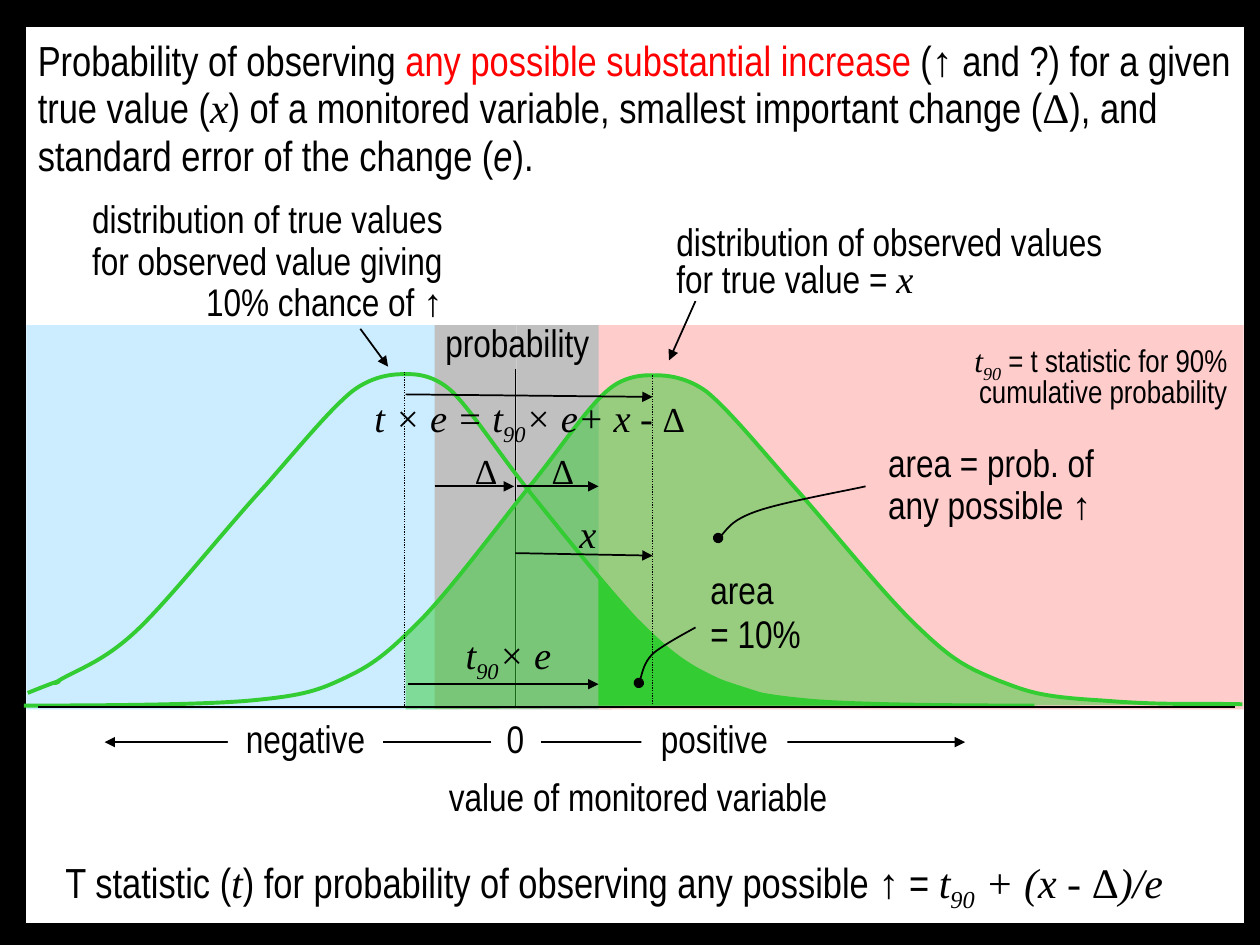
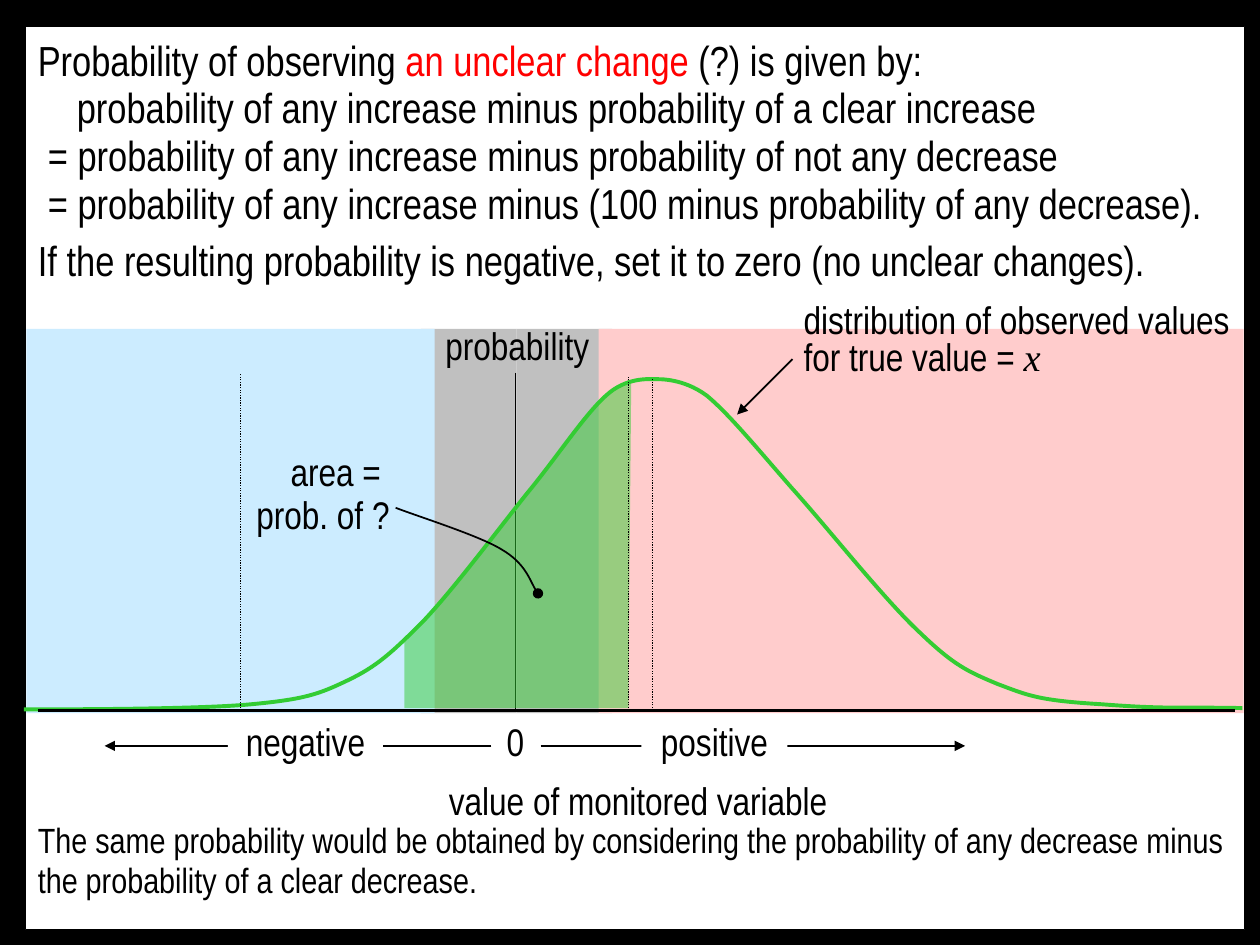
import pptx
import pptx.util
import pptx.dml.color
import pptx.enum.dml
import pptx.enum.shapes
import pptx.enum.text
import pptx.oxml.ns
import lxml.etree

PX = 9144  # one hundred px to the inch
RGB = pptx.dml.color.RGBColor
BLACK, WHITE, RED = RGB(0, 0, 0), RGB(255, 255, 255), RGB(255, 0, 0)
GREY, BLUE, PINK = RGB(0xC0, 0xC0, 0xC0), RGB(0xCC, 0xEC, 0xFF), RGB(0xFF, 0xCC, 0xCC)
GREEN = RGB(0x33, 0xCC, 0x33)
NARROW, TIMES = "Arial Narrow", "Times New Roman"
ALIGN = pptx.enum.text.PP_ALIGN
LEFT, MID, RIGHT = ALIGN.LEFT, ALIGN.CENTER, ALIGN.RIGHT
RECT = pptx.enum.shapes.MSO_SHAPE.RECTANGLE
Pt = pptx.util.Pt
qn = pptx.oxml.ns.qn


def write(para, runs, size, align=LEFT, gap=0.8):
    """Fill a paragraph. Marks: n narrow, r red, e narrow italic,
    t Times, d small Times, i Times italic, s Times italic subscript."""
    para.alignment, para.line_spacing = align, gap
    para.font.size, para.font.name, para.font.color.rgb = Pt(size), NARROW, BLACK
    for words, mark in runs:
        for row, part in enumerate(words.split("\n")):
            if row:
                para.add_line_break()
            run = para.add_run()
            run.text = part
            if mark in "tdis":
                run.font.name = TIMES
            if mark in "eis":
                run.font.italic = True
            if mark == "d":
                run.font.size = Pt(20)
            if mark == "r":
                run.font.color.rgb = RED
            if mark == "s":
                run.font._element.set("baseline", "-25000")


def stroke(shape, width, color=BLACK, end=None, kind=None):
    """Style an outline and drop the shadow."""
    shape.line.color.rgb, shape.line.width = color, Pt(width)
    props = shape._element.spPr
    if end:
        lxml.etree.SubElement(props.find(qn("a:ln")), qn("a:" + end), type=kind)
    if props.find(qn("a:effectLst")) is None:
        lxml.etree.SubElement(props, qn("a:effectLst"))


# Outlines: a start, then three points for each Bézier piece
BELL = [(19, 560), (49, 560), (156, 560), (199, 556), (242, 552), (253, 548), (276, 537),
        (299, 526), (311, 515), (335, 491), (359, 466), (394, 419), (418, 389),
        (442, 360), (464, 326), (481, 311), (497, 296), (516, 298), (520, 298),
        (523, 298), (542, 297), (561, 311), (579, 326), (601, 353), (629, 385),
        (657, 416), (702, 473), (730, 499), (757, 525), (768, 530), (792, 540),
        (816, 549), (824, 553), (875, 556), (926, 560), (940, 558), (986, 559)]
TRUE = [(821, 560), (791, 560), (684, 560), (641, 556), (598, 552), (586, 548), (564, 537),
        (541, 526), (528, 515), (504, 491), (481, 466), (444, 420), (420, 390),
        (396, 360), (375, 327), (359, 311), (343, 296), (327, 297), (321, 297),
        (315, 297), (297, 297), (279, 311), (261, 326), (239, 353), (211, 385),
        (182, 416), (137, 473), (110, 499), (83, 525), (62, 531), (47, 540),
        (33, 548), (69, 531), (22, 550)]
# The tail opens with two straight sides
TAIL = [(475, 560), (475, 457), (514, 500), (528, 517), (538, 519), (549, 529),
        (568, 539), (581, 542), (605, 550), (656, 559), (684, 557), (735, 560)]
RISE = [(322, 563), (322, 530), (322, 550), (321, 505), (338, 488), (352, 471), (368, 452),
        (385, 432), (400, 412)] + BELL[12:]
UNCLEAR = [(321, 559), (321, 489), (321, 546), (321, 504), (352, 474), (392, 421), (418, 389),
           (445, 357), (469, 320), (481, 311), (493, 301), (494, 302), (501, 300),
           (500, 429), (499, 472), (499, 559)]

# Parts both slides share, at the height of the first
BANDS = [(334, 76, GREY), (410, 76, GREY), (21, 324, BLUE), (475, 512, PINK)]
TICKS = [("positive", 509, 116), ("negative", 181, 123), ("0", 396, 26)]
LINES = [(30, 561, 980, 561, 1.5, "plain"), (518, 561, 518, 297, 0.75, "dots"),
         (429, 589, 766, 589, 0.75, "arrow"), (390, 589, 83, 589, 0.75, "arrow")]
LABELS = [(345, 616, 323, 40, MID, 0.8, 22, [("value of monitored variable", "n")]),
          (343, 255, 135, 40, MID, 0.8, 22, [("probability", "n")])]
SEEN = [("distribution of observed values for true value = ", "n"), ("x", "i")]
DELTA = [("Δ", "t")]

# Per slide: drop, body height, body rows (runs, size, indent, space before),
# outlines (points, straight sides, kind), lines and labels
SLIDES = [
    dict(drop=0, tall=712,
         body=[([("Probability of observing ", "n"),
                 ("any possible substantial increase", "r"),
                 (" (↑ and ?) for a given true value (", "n"), ("x", "i"),
                 (") of a monitored variable, smallest important change (", "n"), ("Δ", "t"),
                 ("), and standard error of the change (", "n"), ("e", "e"), (").", "n")],
                24, 0, 5)],
         paths=[(BELL, 0, "curve"), (TAIL, 2, "solid"), (TRUE, 0, "curve"), (RISE, 0, "clear"),
                ([(507, 542), (509, 538), (511, 526), (518, 519), (526, 512), (545, 502),
                  (552, 498)], 0, "call"),
                ([(570, 427), (575, 424), (580, 413), (600, 406), (619, 399), (669, 390),
                  (687, 386)], 0, "call")],
         lines=[(321, 560, 321, 295, 0.75, "dots"), (409, 439, 518, 441, 1, "arrow"),
                (410, 386, 475, 386, 1, "arrow"), (345, 386, 408, 386, 1, "arrow"),
                (324, 543, 475, 543, 1, "arrow"), (322, 313, 518, 315, 1, "arrow"),
                (286, 261, 308, 291, 1, "arrow"), (552, 239, 531, 286, 1, "arrow")],
         labels=[(527, 175, 376, 69, LEFT, 0.8, 22, SEEN),
                 (42, 679, 907, 42, LEFT, 0.8, 24,
                  [("T statistic (", "n"), ("t", "i"),
                   (") for probability of observing any possible ↑ = ", "n"), ("t", "i"),
                   ("90", "s"), (" + (x - ", "i"), ("Δ", "t"), (")/e", "i")]),
                 (33, 154, 328, 110, RIGHT, 0.9, 22,
                  [("distribution of true values for observed value giving 10% chance of ↑", "n")]),
                 (450, 407, 21, 40, MID, 0.8, 22, [("x", "i")]),
                 (554, 447, 102, 81, LEFT, 0.95, 22, [("area \n= 10%", "n")]),
                 (428, 358, 23, 37, MID, 0.8, 20, DELTA),
                 (367, 358, 21, 37, MID, 0.8, 20, DELTA),
                 (340, 500, 127, 40, MID, 0.8, 22, [("t", "i"), ("90", "s"), ("× e", "i")]),
                 (270, 312, 301, 40, MID, 0.8, 22,
                  [("t × e = t", "i"), ("90", "s"), ("× e+ x - ", "i"), ("Δ", "d")]),
                 (695, 348, 186, 77, LEFT, 0.9, 22, [("area = prob. of\nany possible ↑", "n")]),
                 (753, 269, 231, 59, RIGHT, 0.8, 18,
                  [("t", "i"), ("90", "s"),
                   (" = t statistic for 90%\ncumulative probability", "n")])]),
    dict(drop=3, tall=717,
         body=[([("Probability of observing ", "n"), ("an unclear change", "r"),
                 (" (?) is given by:", "n")], 24, 0, 5),
               ([("probability of any increase minus probability of a clear increase", "n")],
                24, 31, 0),
               ([("= probability of any increase minus probability of not any decrease", "n")],
                24, 8, 0),
               ([("= probability of any increase minus (100 minus probability of any decrease).",
                  "n")], 24, 8, 0),
               ([("If the resulting probability is negative, set it to zero "
                  "(no unclear changes).", "n")], 24, 0, 5),
               ([("The same probability would be obtained by considering the probability of "
                  "any decrease minus the probability of a clear decrease.", "n")], 20, 0, 306)],
         paths=[(BELL, 0, "curve"), (UNCLEAR, 0, "clear"),
                ([(427, 468), (422, 462), (417, 444), (398, 433), (380, 422), (332, 407),
                  (314, 400)], 0, "call")],
         lines=[(191, 559, 191, 294, 0.75, "dots"), (499, 561, 499, 296, 0.75, "dots"),
                (629, 282, 585, 326, 1, "arrow")],
         labels=[(628, 234, 376, 69, LEFT, 0.8, 22, SEEN),
                 (161, 350, 158, 81, RIGHT, 0.95, 22, [("area = \nprob. of ?", "n")])]),
]

deck = pptx.Presentation()
deck.slide_width, deck.slide_height = 1000 * PX, 750 * PX
back = deck.slide_master.background.fill
back.solid()
back.fore_color.rgb = BLACK

for plan in SLIDES:
    slide = deck.slides.add_slide(deck.slide_layouts[1])
    shapes, drop = slide.shapes, plan["drop"]
    shapes.title._element.getparent().remove(shapes.title._element)

    # White panel with the body text
    body = slide.placeholders[1]
    body.left, body.top, body.width, body.height = (
        n * PX for n in (20, 21, 968, plan["tall"]))
    body.fill.solid()
    body.fill.fore_color.rgb = WHITE
    stroke(body, 0.75)
    frame = body.text_frame
    frame.auto_size = pptx.enum.text.MSO_AUTO_SIZE.NONE
    frame.margin_left = frame.margin_right = 10 * PX
    frame.margin_top, frame.margin_bottom = 9 * PX, 5 * PX
    for row, (runs, size, indent, before) in enumerate(plan["body"]):
        para = frame.add_paragraph() if row else frame.paragraphs[0]
        props = para._p.get_or_add_pPr()
        props.set("marL", str(indent * PX))
        props.set("indent", "0")
        lxml.etree.SubElement(props, qn("a:buNone"))
        write(para, runs, size, gap=0.95)
        para.space_before = Pt(before)

    # Colour bands
    for x, wide, color in BANDS:
        band = shapes.add_shape(RECT, x * PX, (258 + drop) * PX, wide * PX, 305 * PX)
        band.shadow.inherit = False
        band.fill.solid()
        band.fill.fore_color.rgb = color
        band.line.fill.background()

    # Zero axis lies under the curves, all other lines above them
    lines = [(409, 293, 409, 560, 0.75, "plain")] + LINES + plan["lines"]
    drawn = []
    for x1, y1, x2, y2, width, kind in lines:
        line = shapes.add_connector(pptx.enum.shapes.MSO_CONNECTOR.STRAIGHT, x1 * PX,
                                    (y1 + drop) * PX, x2 * PX, (y2 + drop) * PX)
        arrow = kind == "arrow"
        stroke(line, width, BLACK, "tailEnd" if arrow else None, "triangle")
        if kind == "dots":
            line.line.dash_style = pptx.enum.dml.MSO_LINE.ROUND_DOT
        drawn.append(line)

    # Curves, shaded areas and callouts
    for points, sides, kind in plan["paths"]:
        dots = [(x * PX, (y + drop) * PX) for x, y in points]
        area = kind in ("solid", "clear")
        pen = shapes.build_freeform(*dots[0], scale=1.0)
        pen.add_line_segments(dots[1:], close=area)
        path = pen.convert_to_shape()
        path.shadow.inherit = False

        # Gather each three points into one Bézier piece
        legs = list(path._element.iter(qn("a:lnTo")))[sides:]
        for i in range(0, len(legs), 3):
            bend = lxml.etree.Element(qn("a:cubicBezTo"))
            legs[i].addprevious(bend)
            for leg in legs[i:i + 3]:
                bend.append(leg[0])
                leg.getparent().remove(leg)

        if area:
            path.fill.solid()
            path.fill.fore_color.rgb = GREEN
            path.line.fill.background()
            if kind == "clear":
                tint = path._element.spPr.find(qn("a:solidFill"))[0]
                lxml.etree.SubElement(tint, qn("a:alpha"), val="50000")
        else:
            path.fill.background()
            if kind == "curve":
                stroke(path, 2.25, GREEN)
            else:
                stroke(path, 1, BLACK, "headEnd", "oval")
    for line in drawn[1:]:
        shapes._spTree.append(line._element)

    # Axis words on white
    for words, x, wide in TICKS:
        tick = shapes.add_shape(RECT, x * PX, (574 + drop) * PX, wide * PX, 30 * PX)
        tick.shadow.inherit = False
        tick.fill.solid()
        tick.fill.fore_color.rgb = WHITE
        tick.line.fill.background()
        frame = tick.text_frame
        frame.margin_left = frame.margin_right = 6 * PX
        frame.margin_top = frame.margin_bottom = 0
        frame.word_wrap = False
        write(frame.paragraphs[0], [(words, "n")], 22, MID)

    # Labels
    for x, y, wide, tall, align, gap, size, runs in LABELS + plan["labels"]:
        box = shapes.add_textbox(x * PX, (y + drop) * PX, wide * PX, tall * PX)
        box.text_frame.word_wrap = align != MID
        write(box.text_frame.paragraphs[0], runs, size, align, gap)

deck.save("out.pptx")
